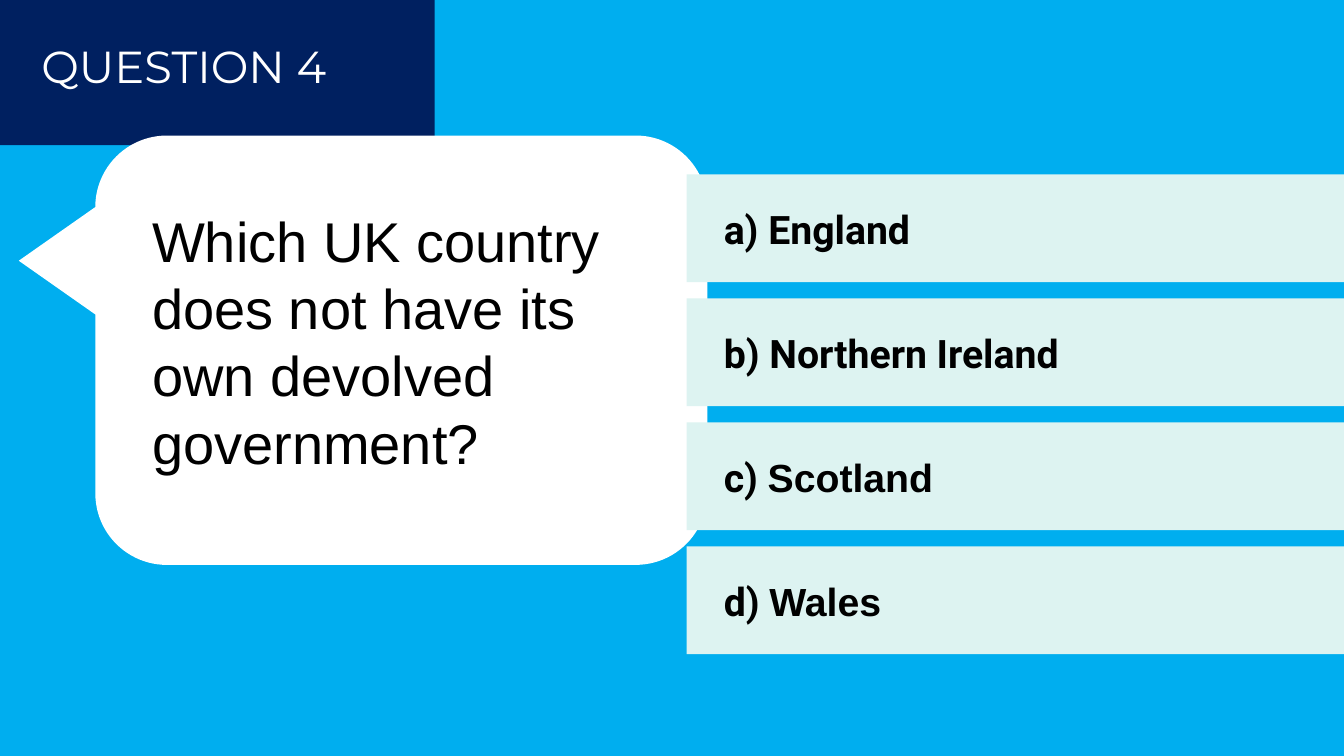
from pptx import Presentation
from pptx.dml.color import RGBColor
from pptx.enum.shapes import MSO_SHAPE as SHAPE
from pptx.enum.text import MSO_ANCHOR, MSO_AUTO_SIZE, PP_ALIGN
from pptx.util import Inches, Pt

SKY = RGBColor(0x00, 0xAE, 0xEF)
NAVY = RGBColor(0x00, 0x20, 0x60)
MINT = RGBColor(0xDD, 0xF3, 0xF1)
WHITE = RGBColor(0xFF, 0xFF, 0xFF)
BLACK = RGBColor(0x00, 0x00, 0x00)

QUESTION = ["Which UK country", "does not have its", "own devolved", "government?"]
ANSWERS = [
    [("a) England", "Roboto")],
    [("b) Northern Ireland", "Roboto")],
    [("c) ", "Roboto"), ("Scotland", "Arial")],
    [("d) ", "Roboto"), ("Wales", "Arial")],
]
BAR_LEFT, BAR_TOP, BAR_H, BAR_PITCH = 6.81, 1.73, 1.07, 1.23

prs = Presentation()
prs.slide_width, prs.slide_height = Inches(13.33), Inches(7.5)
s = prs.slides.add_slide(prs.slide_layouts[5])
s.background.fill.solid()
s.background.fill.fore_color.rgb = SKY


def add_block(kind, x, y, w, h, color):
    """Add a flat filled shape without outline; lengths in inches."""
    sp = s.shapes.add_shape(kind, Inches(x), Inches(y), Inches(w), Inches(h))
    sp.fill.solid()
    sp.fill.fore_color.rgb = color
    sp.line.fill.background()
    sp.shadow.inherit = False
    return sp


def add_run(p, text, font, size, color=BLACK, bold=False):
    r = p.add_run()
    r.text = text
    r.font.name, r.font.size, r.font.bold = font, Pt(size), bold
    r.font.color.rgb = color


# Heading: the title is moved in front of its navy block
add_block(SHAPE.RECTANGLE, 0, 0, 4.31, 1.44, NAVY)
title = s.shapes.title
s.shapes._spTree.append(title._element)
title.left, title.top = Inches(0.29), Inches(0.32)
title.width, title.height = Inches(4.02), Inches(0.74)
tf = title.text_frame
tf.margin_left = tf.margin_right = tf.margin_top = tf.margin_bottom = Inches(0.12)
tf.vertical_anchor = MSO_ANCHOR.TOP
tf.auto_size = MSO_AUTO_SIZE.NONE
p = tf.paragraphs[0]
p.alignment, p.line_spacing = PP_ALIGN.LEFT, 0.9
add_run(p, "QUESTION 4", "Montserrat", 32, WHITE)

# Question in a speech bubble turned on its side
bubble = add_block(SHAPE.ROUNDED_RECTANGULAR_CALLOUT, 1.85, 0.44, 4.26, 6.07, WHITE)
bubble.rotation = 90
tf = s.shapes.add_textbox(Inches(1.41), Inches(2), Inches(5.08), Inches(2.79)).text_frame
tf.word_wrap = True
p = tf.paragraphs[0]
for i, line in enumerate(QUESTION):
    if i:
        p.add_line_break()
    add_run(p, line, "Arial", 40)

# Answers
for i, runs in enumerate(ANSWERS):
    y = BAR_TOP + i * BAR_PITCH
    add_block(SHAPE.RECTANGLE, BAR_LEFT, y, 13.33 - BAR_LEFT, BAR_H, MINT)
    box = s.shapes.add_textbox(Inches(BAR_LEFT + 0.27), Inches(y + 0.26), Inches(5.81), Inches(0.57))
    tf = box.text_frame
    tf.word_wrap = True
    for text, font in runs:
        add_run(tf.paragraphs[0], text, font, 28, bold=True)

prs.save("out.pptx")
